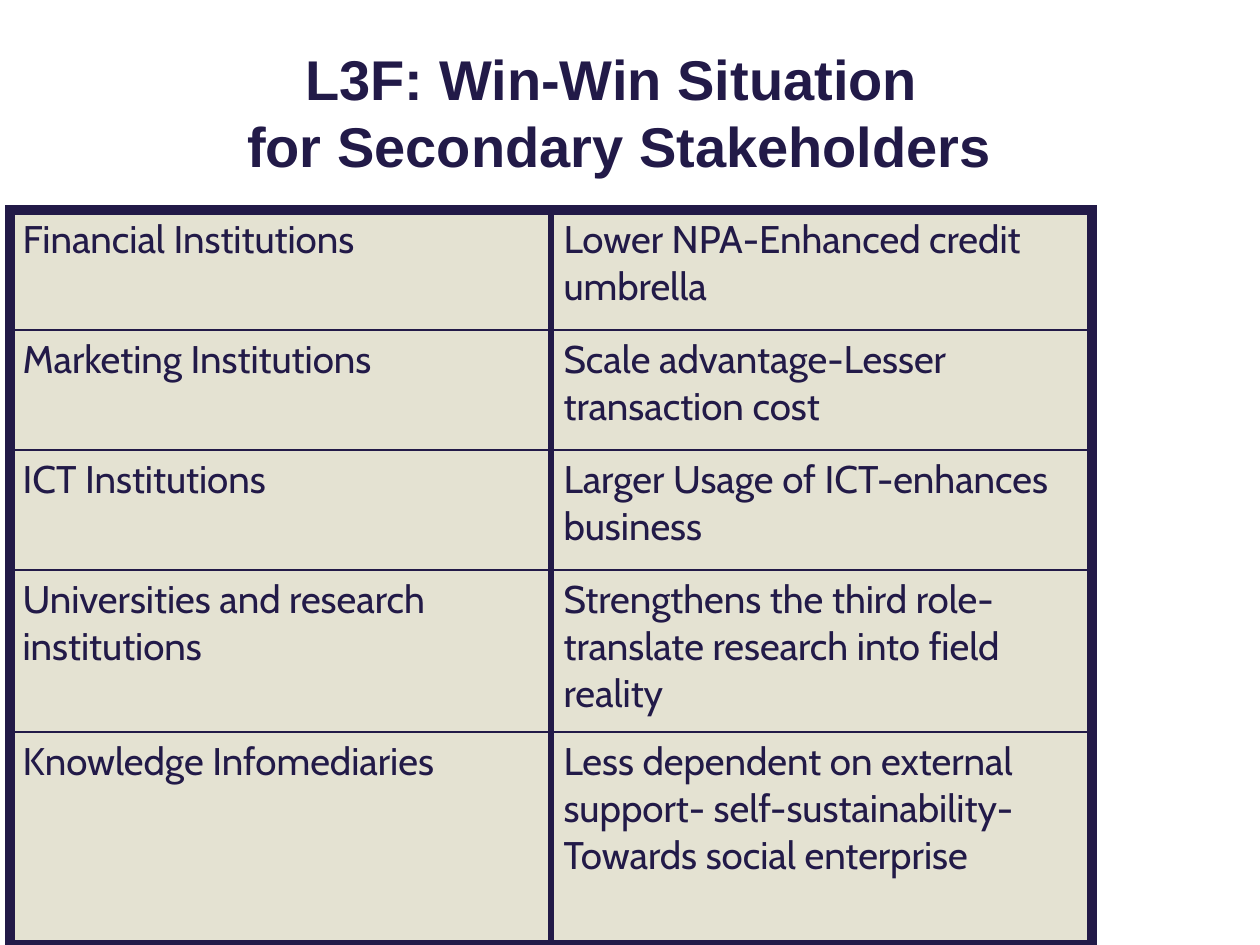
from lxml import etree
from pptx import Presentation
from pptx import util as u
from pptx.dml.color import RGBColor
from pptx.enum import text
from pptx.oxml.ns import qn

NAVY = RGBColor(0x22, 0x1A, 0x48)
SAND = RGBColor(0xE4, 0xE2, 0xD2)
OUTER, DIVIDER, THIN = 6, 4.5, 1  # border widths in points
ROW_HEIGHTS = [120, 120, 120, 162, 213]
TITLE = ["L3F: Win-Win Situation ", "for Secondary Stakeholders"]
BENEFITS = [
    ("Financial Institutions", "Lower NPA-Enhanced credit umbrella"),
    ("Marketing Institutions", "Scale advantage-Lesser transaction cost"),
    ("ICT Institutions", "Larger Usage of ICT-enhances business"),
    ("Universities and research institutions",
     "Strengthens the third role-translate research into field reality"),
    ("Knowledge Infomediaries",
     "Less dependent on external support- self-sustainability-"
     "Towards social enterprise"),
]


def px(n):
    return u.Emu(round(n * 914400 / 126))


def set_font(p, name, size, bold=False):
    p.font.name = name
    p.font.size = u.Pt(size)
    p.font.bold = bold
    p.font.color.rgb = NAVY


def set_borders(cell, left, right, top, bottom):
    """Draw the four cell borders, widths in points."""
    tc_pr = cell._tc.get_or_add_tcPr()
    sides = {"lnL": left, "lnR": right, "lnT": top, "lnB": bottom}
    for i, (tag, width) in enumerate(sides.items()):
        ln = etree.Element(qn(f"a:{tag}"), w=str(u.Pt(width)))
        fill = etree.SubElement(ln, qn("a:solidFill"))
        etree.SubElement(fill, qn("a:srgbClr"), val=str(NAVY))
        tc_pr.insert(i, ln)


def add_title(s, x, y, w, h):
    tf = s.shapes.add_textbox(px(x), px(y), px(w), px(h)).text_frame
    tf.word_wrap = False
    tf.vertical_anchor = text.MSO_ANCHOR.MIDDLE
    for i, line in enumerate(TITLE):
        p = tf.add_paragraph() if i else tf.paragraphs[0]
        p.text = line
        p.alignment = text.PP_ALIGN.CENTER
        set_font(p, "Arial", 32, bold=True)


def add_benefits(s, x, y, w):
    last = len(BENEFITS) - 1
    frame = s.shapes.add_table(len(BENEFITS), 2, px(x), px(y), px(w),
                               px(sum(ROW_HEIGHTS)))
    table = frame.table
    table.first_row = table.horz_banding = False
    for col in table.columns:
        col.width = px(w / 2)
    for r, (row, height) in enumerate(zip(BENEFITS, ROW_HEIGHTS)):
        table.rows[r].height = px(height)
        for c, words in enumerate(row):
            cell = table.cell(r, c)
            cell.text = words
            set_font(cell.text_frame.paragraphs[0], "Cabin", 22)
            cell.fill.solid()
            cell.fill.fore_color.rgb = SAND
            set_borders(cell,
                        left=DIVIDER if c else OUTER,
                        right=OUTER if c else DIVIDER,
                        top=THIN if r else OUTER,
                        bottom=OUTER if r == last else THIN)


def main():
    prs = Presentation()
    prs.slide_width, prs.slide_height = px(1260), px(945)
    s = prs.slides.add_slide(prs.slide_layouts[6])
    add_title(s, 232, 37, 775, 149)
    add_benefits(s, 10, 210, 1082)
    prs.save("out.pptx")


if __name__ == "__main__":
    main()
